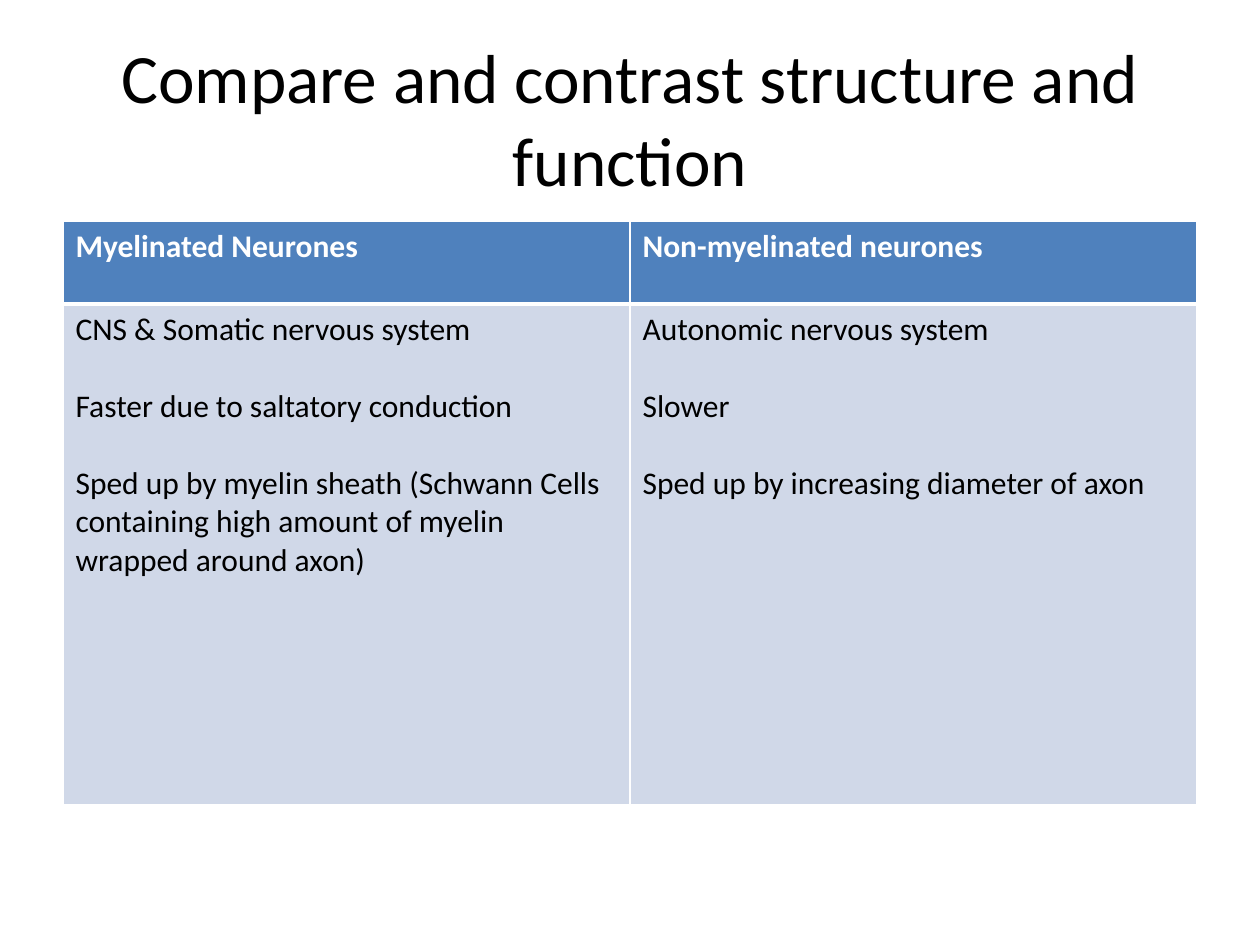
import pptx
import pptx.dml.color
import pptx.enum.text
import pptx.oxml
import pptx.oxml.ns
import pptx.util

SCALE = 914400 / 126
HUES = {"page": "FFFFFF", "ink": "000000", "head": "4F81BD", "body": "D0D8E8"}
HEADS = ["Myelinated Neurones", "Non-myelinated neurones"]
FACTS = [
    [
        "CNS & Somatic nervous system",
        "Faster due to saltatory conduction",
        "Sped up by myelin sheath (Schwann Cells containing high amount of myelin wrapped around axon)",
    ],
    [
        "Autonomic nervous system",
        "Slower",
        "Sped up by increasing diameter of axon",
    ],
]


def px(count):
    """Turn pixels into EMU."""
    return pptx.util.Emu(round(count * SCALE))


def hue(name):
    """Look up a named colour."""
    return pptx.dml.color.RGBColor.from_string(HUES[name])


def write(frame, lines, size=18, color="ink", bold=False, align="LEFT", gap=0):
    """Fill a text frame with one paragraph per line."""
    for index, line in enumerate(lines):
        para = frame.add_paragraph() if index else frame.paragraphs[0]
        para.alignment = getattr(pptx.enum.text.PP_ALIGN, align)
        para.space_before = pptx.util.Pt(gap if index else 0)
        run = para.add_run()
        run.text = line
        font = run.font
        font.name = "Calibri"
        font.size = pptx.util.Pt(size)
        font.bold = bold
        font.color.rgb = hue(color)


def edge(cell, **widths):
    """Draw the cell borders, given in points by side."""
    props = cell._tc.get_or_add_tcPr()
    for index, side in enumerate("LRTB"):
        width = pptx.util.Pt(widths.get(side, 1))
        line = pptx.oxml.parse_xml(
            f'<a:ln{side} {pptx.oxml.ns.nsdecls("a")} w="{width}"><a:solidFill>'
            f'<a:srgbClr val="{HUES["page"]}"/></a:solidFill></a:ln{side}>'
        )
        props.insert(index, line)


def paint(cell, name):
    """Fill a cell with a named colour."""
    cell.fill.solid()
    cell.fill.fore_color.rgb = hue(name)


def add_title(slide, text):
    """Place and fill the title."""
    title = slide.shapes.title
    title.left, title.top, title.width, title.height = map(px, (63, 38, 1134, 158))
    frame = title.text_frame
    frame.word_wrap = True
    frame.auto_size = pptx.enum.text.MSO_AUTO_SIZE.NONE
    frame.vertical_anchor = pptx.enum.text.MSO_ANCHOR.MIDDLE
    write(frame, [text], size=39.6, align="CENTER")


def add_grid(slide):
    """Add the table that compares the neurones."""
    rows = (83, 501)
    box = map(px, (63, 221, 1134, sum(rows)))
    table = slide.shapes.add_table(2, 2, *box).table
    for row, height in zip(table.rows, rows):
        row.height = px(height)
    for col, (head, facts) in enumerate(zip(HEADS, FACTS)):
        table.columns[col].width = px(567)
        top, low = table.cell(0, col), table.cell(1, col)
        paint(top, "head")
        paint(low, "body")
        edge(top, B=3)
        edge(low, T=3)
        write(top.text_frame, [head], color="page", bold=True)
        write(low.text_frame, facts, gap=22)


def main():
    """Build and save the slide."""
    deck = pptx.Presentation()
    deck.slide_width, deck.slide_height = px(1260), px(945)
    slide = deck.slides.add_slide(deck.slide_layouts[5])
    slide.background.fill.solid()
    slide.background.fill.fore_color.rgb = hue("page")
    add_title(slide, "Compare and contrast structure and function")
    add_grid(slide)
    deck.save("out.pptx")


if __name__ == "__main__":
    main()
